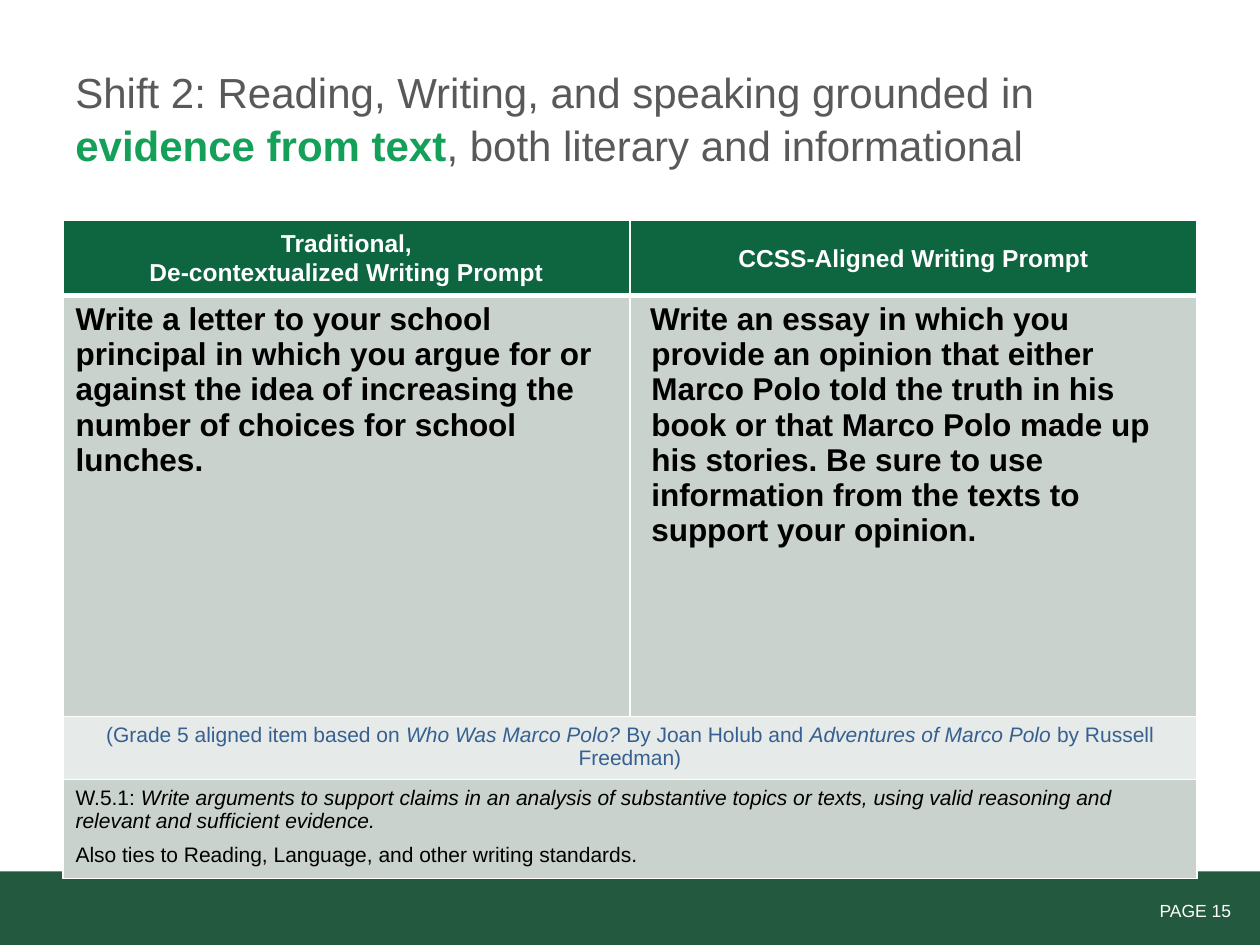
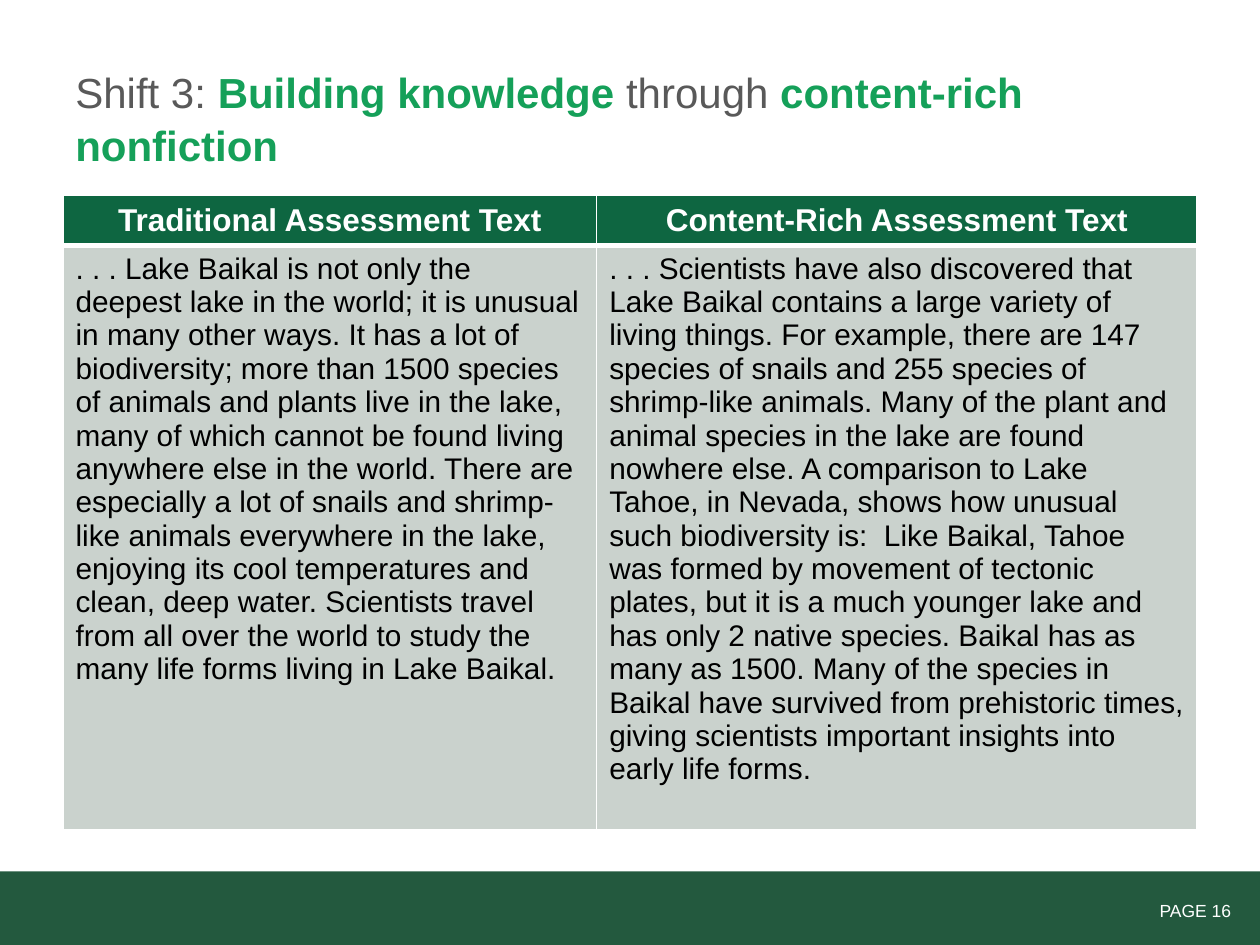
"""Build two slides on reading and writing shifts, each with a comparison table."""
import pptx
import pptx.dml.color
import pptx.enum.shapes
import pptx.enum.text
import pptx.oxml
import pptx.oxml.ns
import pptx.util

Pt = pptx.util.Pt
RGBColor = pptx.dml.color.RGBColor
ALIGN = pptx.enum.text.PP_ALIGN
ANCHOR = pptx.enum.text.MSO_ANCHOR

WHITE = RGBColor(0xFF, 0xFF, 0xFF)
BLACK = RGBColor(0, 0, 0)
GREY = RGBColor(0x59, 0x59, 0x59)
ACCENT_GREEN = RGBColor(0x15, 0xA0, 0x59)
BAND_GREEN = RGBColor(0x23, 0x59, 0x3E)
HEADER_GREEN = RGBColor(0x0E, 0x66, 0x41)
CELL_DARK = RGBColor(0xCA, 0xD2, 0xCD)
CELL_LIGHT = RGBColor(0xE6, 0xEA, 0xE8)
SOURCE_BLUE = RGBColor(0x36, 0x60, 0x92)

FONT = "Arial"
MARGIN = 36
CONTENT_WIDTH = 648
LOOSE = 1.06


def write_runs(paragraph, pieces, size, color, bold=False, align=ALIGN.LEFT):
    """Write pieces, each a string or a (text, font settings) pair, as runs."""
    paragraph.alignment = align
    for piece in pieces:
        text, changes = (piece, {}) if isinstance(piece, str) else piece
        run = paragraph.add_run()
        run.text = text
        font = run.font
        font.name, font.size = FONT, Pt(size)
        font.bold = changes.get("bold", bold)
        font.italic = changes.get("italic", False)
        font.color.rgb = changes.get("color", color)


def add_text(slide, box, pieces, size, color, align=ALIGN.LEFT, anchor=ANCHOR.TOP):
    """Add a wrapped text box with one paragraph and return the paragraph."""
    frame = slide.shapes.add_textbox(*map(Pt, box)).text_frame
    frame.word_wrap = True
    frame.vertical_anchor = anchor
    paragraph = frame.paragraphs[0]
    write_runs(paragraph, pieces, size, color, align=align)
    return paragraph


def add_base_slide(presentation, title, page):
    """Add a blank slide with the footer band, page label and title."""
    slide = presentation.slides.add_slide(presentation.slide_layouts[6])
    band = slide.shapes.add_shape(
        pptx.enum.shapes.MSO_SHAPE.RECTANGLE, 0, Pt(498), Pt(720), Pt(42))
    band.shadow.inherit = False
    band.fill.solid()
    band.fill.fore_color.rgb = BAND_GREEN
    band.line.fill.background()
    add_text(slide, (596, 510.5, 114.5, 19.5), [f"PAGE {page}"], 10, WHITE, ALIGN.RIGHT)
    heading = add_text(slide, (MARGIN, 21.6, CONTENT_WIDTH, 90), title, 24, GREY,
                       anchor=ANCHOR.MIDDLE)
    heading.line_spacing = LOOSE
    return slide


def set_borders(cell, **widths):
    """Draw white cell borders, given as a width in points for each side."""
    properties = cell._tc.get_or_add_tcPr()
    for side in "LRTB":
        properties.append(pptx.oxml.parse_xml(
            f'<a:ln{side} {pptx.oxml.ns.nsdecls("a")} w="{Pt(widths.get(side, 1))}">'
            f'<a:solidFill><a:srgbClr val="{WHITE}"/></a:solidFill></a:ln{side}>'))


def add_grid(slide, top, column_widths, row_fills, row_heights):
    """Add a table whose rows are filled and ruled, with a thick line under the header."""
    table = slide.shapes.add_table(
        len(row_heights), len(column_widths), Pt(MARGIN), Pt(top),
        Pt(CONTENT_WIDTH), Pt(sum(row_heights))).table
    table.first_row = table.horz_banding = False
    for column, width in zip(table.columns, column_widths):
        column.width = Pt(width)
    for index, (row, height, fill) in enumerate(zip(table.rows, row_heights, row_fills)):
        row.height = Pt(height)
        for cell in row.cells:
            set_borders(cell, T=3 if index == 1 else 1, B=3 if index == 0 else 1)
            cell.fill.solid()
            cell.fill.fore_color.rgb = fill
    return table


def fill_cell(cell, paragraphs, size, color=BLACK, bold=False, align=ALIGN.LEFT):
    """Write a list of paragraphs into a cell and return them."""
    frame = cell.text_frame
    for index, pieces in enumerate(paragraphs):
        paragraph = frame.add_paragraph() if index else frame.paragraphs[0]
        write_runs(paragraph, pieces, size, color, bold, align)
    return frame.paragraphs


def fill_header(cell, lines, size, spacing=1.0):
    """Write centred white header lines into a cell."""
    cell.vertical_anchor = ANCHOR.MIDDLE
    for paragraph in fill_cell(cell, [[line] for line in lines], size, WHITE, True, ALIGN.CENTER):
        paragraph.line_spacing = spacing


def accent(text):
    """Return a bold green piece of a title."""
    return text, {"bold": True, "color": ACCENT_GREEN}


def italic(text):
    """Return an italic piece of text."""
    return text, {"italic": True}


def add_evidence_slide(presentation):
    """Add the slide that compares two writing prompts."""
    slide = add_base_slide(presentation, [
        "Shift 2: Reading, Writing, and speaking grounded in ",
        accent("evidence from text"), ", both literary and informational"], 15)
    table = add_grid(slide, 126, (324, 324),
                     (HEADER_GREEN, CELL_DARK, CELL_LIGHT, CELL_DARK),
                     (40.3, 240.7, 34, 53.5))
    fill_header(table.cell(0, 0), ["Traditional,", "De-contextualized Writing Prompt"], 14, LOOSE)
    fill_header(table.cell(0, 1), ["CCSS-Aligned Writing Prompt"], 14, LOOSE)
    fill_cell(table.cell(1, 0), [[
        "Write a letter to your school principal in which you argue for or against the idea "
        "of increasing the number of choices for school lunches."]], 18, bold=True)
    essay = fill_cell(table.cell(1, 1), [[
        "Write an essay in which you provide an opinion that either Marco Polo told the truth "
        "in his book or that Marco Polo made up his stories. Be sure to use information from "
        "the texts to support your opinion."]], 18, bold=True)[0]
    indent = essay._p.get_or_add_pPr()
    indent.set("marL", str(Pt(5)))
    indent.set("indent", str(Pt(-0.75)))
    for row in (2, 3):
        table.cell(row, 0).merge(table.cell(row, 1))
    fill_cell(table.cell(2, 0), [[
        "(Grade 5 aligned item based on ", italic("Who Was Marco Polo? "),
        "By Joan Holub and ", italic("Adventures of Marco Polo "),
        "by Russell Freedman)"]], 12, SOURCE_BLUE, align=ALIGN.CENTER)
    standards = fill_cell(table.cell(3, 0), [
        ["W.5.1: ", italic(
            "Write arguments to support claims in an analysis of substantive topics or texts, "
            "using valid reasoning and relevant and sufficient evidence.")],
        ["Also ties to Reading, Language, and other writing standards."]], 12)
    standards[1].space_before = Pt(6)


def add_knowledge_slide(presentation):
    """Add the slide that compares two assessment texts."""
    slide = add_base_slide(presentation, [
        "Shift 3: ", accent("Building knowledge"), " through ",
        accent("content-rich nonfiction")], 16)
    table = add_grid(slide, 111.6, (305, 343), (HEADER_GREEN, CELL_DARK), (28, 329.7))
    headers = ("Traditional Assessment Text", "Content-Rich Assessment Text")
    passages = (
        ". . . Lake Baikal is not only the deepest lake in the world; it is unusual in many "
        "other ways. It has a lot of biodiversity; more than 1500 species of animals and plants "
        "live in the lake, many of which cannot be found living anywhere else in the world. "
        "There are especially a lot of snails and shrimp-like animals everywhere in the lake, "
        "enjoying its cool temperatures and clean, deep water. Scientists travel from all over "
        "the world to study the many life forms living in Lake Baikal.",
        ". . . Scientists have also discovered that Lake Baikal contains a large variety of "
        "living things. For example, there are 147 species of snails and 255 species of "
        "shrimp-like animals. Many of the plant and animal species in the lake are found nowhere "
        "else. A comparison to Lake Tahoe, in Nevada, shows how unusual such biodiversity is:  "
        "Like Baikal, Tahoe was formed by movement of tectonic plates, but it is a much younger "
        "lake and has only 2 native species. Baikal has as many as 1500. Many of the species in "
        "Baikal have survived from prehistoric times, giving scientists important insights into "
        "early life forms.")
    for column, (header, passage) in enumerate(zip(headers, passages)):
        fill_header(table.cell(0, column), [header], 18)
        fill_cell(table.cell(1, column), [[passage]], 17)


def main():
    """Build the presentation and save it."""
    presentation = pptx.Presentation()
    presentation.slide_width, presentation.slide_height = Pt(720), Pt(540)
    add_evidence_slide(presentation)
    add_knowledge_slide(presentation)
    presentation.save("out.pptx")


if __name__ == "__main__":
    main()
